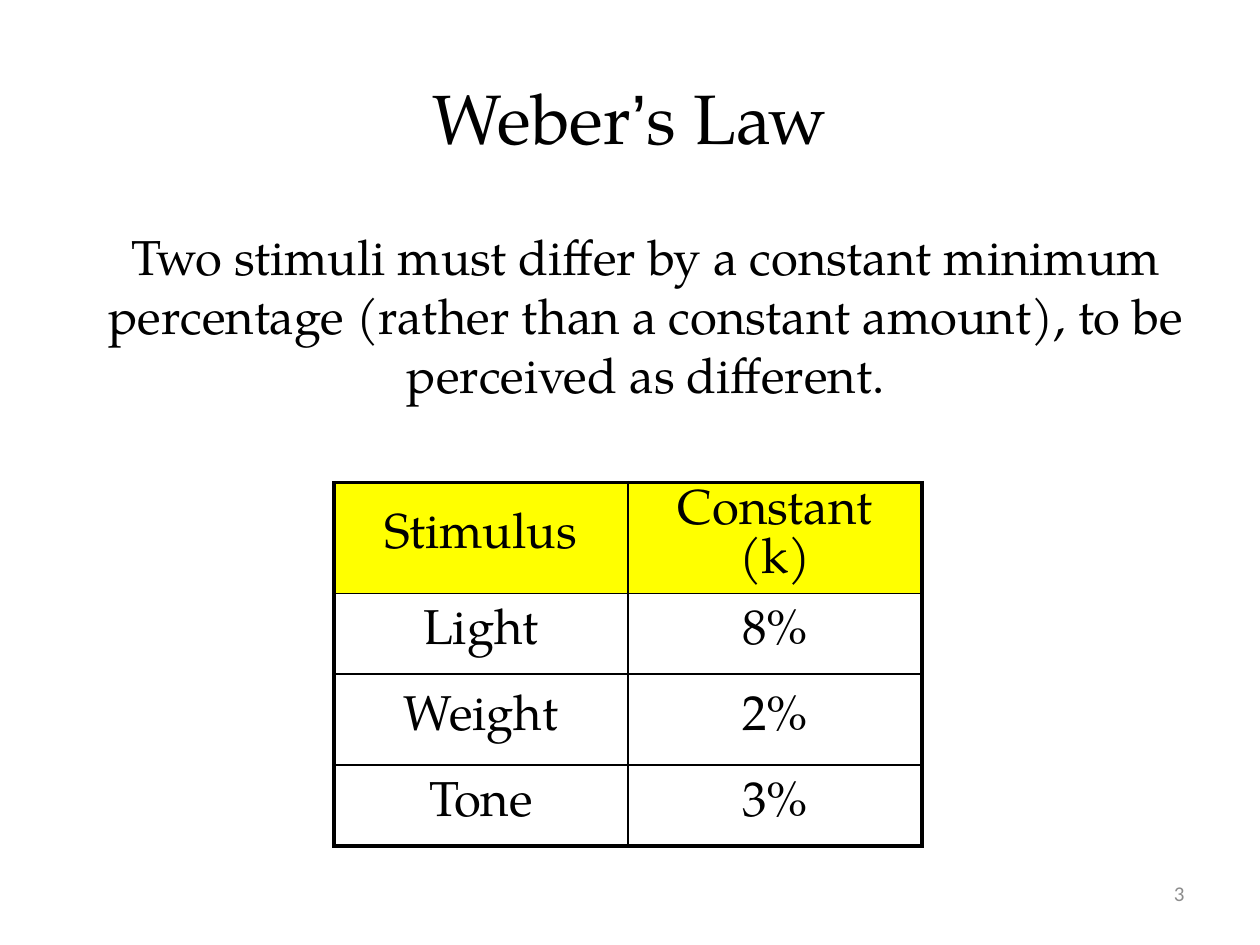
from lxml.etree import SubElement
from pptx import Presentation
from pptx.dml.color import RGBColor
from pptx.enum.text import MSO_ANCHOR as Anchor, PP_ALIGN as Align
from pptx.oxml.ns import qn
from pptx.util import Cm, Pt

COLORS = {"text": "000000", "number": "8C8C8C", "header": "FFFF00", "border": "000000"}
SERIF = "TeX Gyre Pagella"


def add_run(p, text, size, font=SERIF, color="text"):
    r = p.add_run()
    r.text = text
    r.font.size = Pt(size)
    r.font.name = font
    r.font.color.rgb = RGBColor.from_string(COLORS[color])


def set_border(cell, side, width):
    """Draw one cell side ("L", "R", "T" or "B"); call in that order, before the fill."""
    ln = SubElement(cell._tc.get_or_add_tcPr(), qn(f"a:ln{side}"), w=str(Pt(width)))
    fill = SubElement(ln, qn("a:solidFill"))
    SubElement(fill, qn("a:srgbClr"), val=COLORS["border"])


prs = Presentation()
prs.slide_width, prs.slide_height = Cm(25.4), Cm(19.05)
s = prs.slides.add_slide(prs.slide_layouts[6])

# Title, statement and slide number: box, anchor, alignment, runs
texts = [
    ((1.27, 0.76, 22.86, 3.18), Anchor.MIDDLE, Align.CENTER,
     [("Weber", 40), ("’", 40, "Arial"), ("s Law", 40)]),
    ((1.9, 4.45, 22.23, 4.65), Anchor.TOP, Align.CENTER,
     [("Two stimuli must differ by a constant minimum percentage "
       "(rather than a constant amount), to be perceived as different.", 28)]),
    ((18.21, 17.35, 5.92, 1.32), Anchor.MIDDLE, Align.RIGHT,
     [("3", 12, "Calibri", "number")]),
]
for box, anchor, align, runs in texts:
    tf = s.shapes.add_textbox(*map(Cm, box)).text_frame
    tf.word_wrap = True
    tf.vertical_anchor = anchor
    p = tf.paragraphs[0]
    p.alignment = align
    for run in runs:
        add_run(p, *run)

# Table of Weber constants
rows = [("Stimulus", "Constant (k)"), ("Light", "8%"), ("Weight", "2%"), ("Tone", "3%")]
heights = [1.47, 1.63, 1.83, 1.63]
last_row, last_col = len(rows) - 1, len(rows[0]) - 1
table = s.shapes.add_table(len(rows), len(rows[0]), Cm(6.73), Cm(9.73),
                           Cm(11.86), Cm(sum(heights))).table
for column in table.columns:
    column.width = Cm(5.93)
for i, (row, height) in enumerate(zip(rows, heights)):
    table.rows[i].height = Cm(height)
    for j, text in enumerate(row):
        cell = table.cell(i, j)
        outer = {"L": j == 0, "R": j == last_col, "T": i == 0, "B": i == last_row}
        for side, is_outer in outer.items():
            set_border(cell, side, 2.25 if is_outer else 1)
        if i == 0:
            cell.fill.solid()
            cell.fill.fore_color.rgb = RGBColor.from_string(COLORS["header"])
        else:
            cell.fill.background()
        cell.vertical_anchor = Anchor.MIDDLE
        p = cell.text_frame.paragraphs[0]
        p.alignment = Align.CENTER
        p.line_spacing = Pt(28)
        add_run(p, text, 28)
        p.runs[0].font.bold = False

prs.save("out.pptx")
